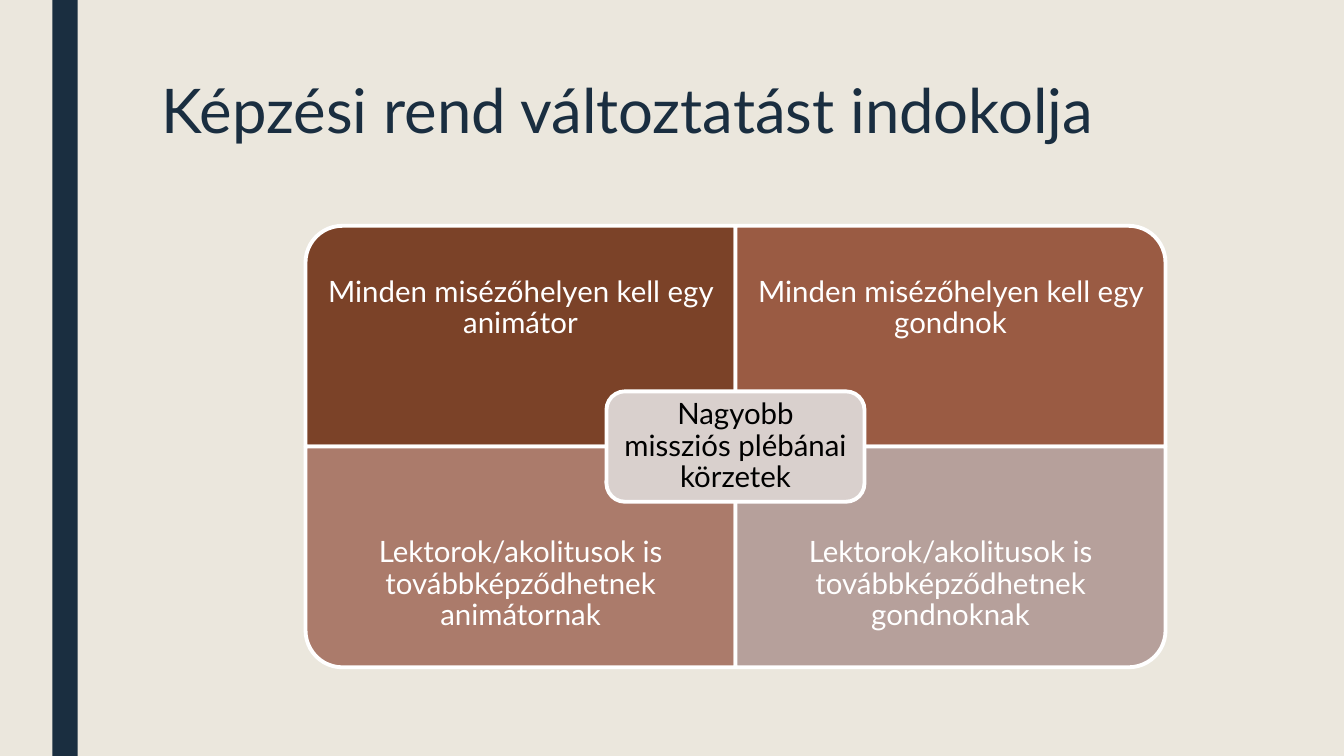
from pptx import Presentation
from pptx.dml.color import RGBColor
from pptx.enum import shapes, text
from pptx.util import Inches, Pt

# Content
TITLE = "Képzési rend változtatást indokolja"
CENTRE = "Nagyobb missziós plébánai körzetek"
# text, column, row, fill, rotation that turns the rounded corner outwards
QUADRANTS = [
    ("Minden misézőhelyen kell egy animátor", 0, 0, "top_left", 270),
    ("Minden misézőhelyen kell egy gondnok", 1, 0, "top_right", 0),
    ("Lektorok/akolitusok is továbbképződhetnek animátornak", 0, 1, "bottom_left", 180),
    ("Lektorok/akolitusok is továbbképződhetnek gondnoknak", 1, 1, "bottom_right", 90),
]
COLORS = {
    "background": "EBE7DD", "navy": "1A2E40", "white": "FFFFFF", "black": "000000",
    "top_left": "7B4228", "top_right": "9A5B43",
    "bottom_left": "AB7B6B", "bottom_right": "B6A09B", "centre": "D9D0CD",
}
FONT = "Lato"

# Matrix geometry in inches
LEFT, TOP = 3.03, 2.24
CELL_W, CELL_H = 4.265, 2.19
LABEL_H = CELL_H * 0.75
CENTRE_W, CENTRE_H = CELL_W * 0.6, CELL_H * 0.5
CENTRE_INSET = 0.05


def color(name):
    return RGBColor.from_string(COLORS[name])


def add_run(paragraph, words, size, color_name):
    run = paragraph.add_run()
    run.text = words
    run.font.name = FONT
    run.font.size = Pt(size)
    run.font.color.rgb = color(color_name)


def add_block(slide, kind, box, fill, outlined=True):
    shape = slide.shapes.add_shape(kind, *map(Inches, box))
    shape.shadow.inherit = False
    shape.fill.solid()
    shape.fill.fore_color.rgb = color(fill)
    if outlined:
        shape.line.color.rgb = color("white")
        shape.line.width = Pt(2.75)
    else:
        shape.line.fill.background()
    return shape


def add_label(slide, words, box, margin, color_name):
    frame = slide.shapes.add_textbox(*map(Inches, box)).text_frame
    frame.word_wrap = True
    frame.vertical_anchor = text.MSO_ANCHOR.MIDDLE
    frame.margin_left = frame.margin_right = Inches(margin)
    frame.margin_top = frame.margin_bottom = Inches(margin)
    paragraph = frame.paragraphs[0]
    paragraph.alignment = text.PP_ALIGN.CENTER
    paragraph.line_spacing = 0.9
    add_run(paragraph, words, 21, color_name)


def add_title(slide):
    title = slide.shapes.title
    title.left, title.top, title.width, title.height = map(Inches, (1.5, 0.75, 10.5, 1.62))
    frame = title.text_frame
    frame.auto_size = text.MSO_AUTO_SIZE.NONE
    frame.vertical_anchor = text.MSO_ANCHOR.TOP
    paragraph = frame.paragraphs[0]
    paragraph.alignment = text.PP_ALIGN.LEFT
    paragraph.line_spacing = 0.89
    add_run(paragraph, TITLE, 44, "navy")


def add_quadrant(slide, words, column, row, fill, rotation):
    left, top = LEFT + column * CELL_W, TOP + row * CELL_H
    # A quarter turn swaps width and height around the same centre
    width, height = (CELL_H, CELL_W) if rotation % 180 else (CELL_W, CELL_H)
    box = (left + (CELL_W - width) / 2, top + (CELL_H - height) / 2, width, height)
    block = add_block(slide, shapes.MSO_SHAPE.ROUND_1_RECTANGLE, box, fill)
    block.rotation = rotation
    # Labels keep to the outer three quarters of each cell
    label_top = top + row * (CELL_H - LABEL_H)
    add_label(slide, words, (left, label_top, CELL_W, LABEL_H), 0.16, "white")


def main():
    presentation = Presentation()
    presentation.slide_width, presentation.slide_height = Inches(13.33), Inches(7.5)
    slide = presentation.slides.add_slide(presentation.slide_layouts[5])
    slide.background.fill.solid()
    slide.background.fill.fore_color.rgb = color("background")

    # Side bar and title
    add_block(slide, shapes.MSO_SHAPE.RECTANGLE, (0.52, 0, 0.25, 7.5), "navy", outlined=False)
    add_title(slide)

    # Four quadrants
    for quadrant in QUADRANTS:
        add_quadrant(slide, *quadrant)

    # Centre box
    left = LEFT + CELL_W - CENTRE_W / 2
    top = TOP + CELL_H - CENTRE_H / 2
    add_block(slide, shapes.MSO_SHAPE.ROUNDED_RECTANGLE, (left, top, CENTRE_W, CENTRE_H), "centre")
    label_box = (left + CENTRE_INSET, top + CENTRE_INSET,
                 CENTRE_W - 2 * CENTRE_INSET, CENTRE_H - 2 * CENTRE_INSET)
    add_label(slide, CENTRE, label_box, 0.09, "black")

    presentation.save("out.pptx")


if __name__ == "__main__":
    main()
